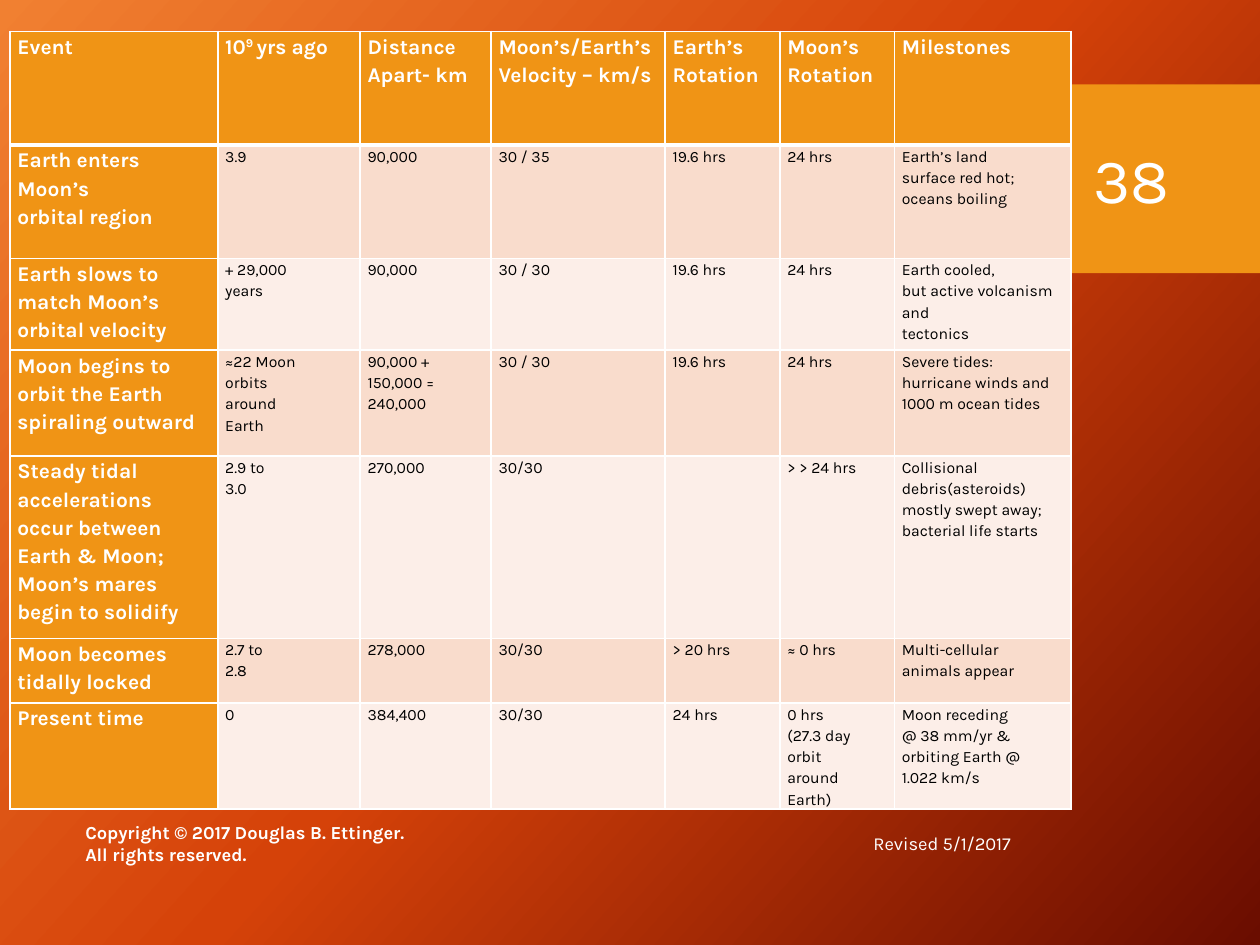
"""Build the slide on the milestones of the Earth and Moon."""
import copy

import pptx
import pptx.dml.color
import pptx.enum.shapes
import pptx.enum.text
import pptx.oxml
import pptx.oxml.ns
import pptx.util

Cm, Pt = pptx.util.Cm, pptx.util.Pt
ALIGN, ANCHOR = pptx.enum.text.PP_ALIGN, pptx.enum.text.MSO_ANCHOR

HUES = {"light": "F18031", "mid": "D54209", "dark": "6A0D00", "gold": "F09415",
        "odd": "F9DCCC", "even": "FCEEE8", "white": "FFFFFF", "black": "000000"}

COLS = [4.19, 2.87, 2.64, 3.51, 2.31, 2.31, 3.56]
ROWS = [2.29, 2.29, 1.85, 2.13, 3.68, 1.3, 2.13]

CELLS = [
    ["Event", "10^9 ^yrs ago", "Distance\nApart- km", "Moon’s/Earth’s\nVelocity – km/s",
     "Earth’s\nRotation", "Moon’s\nRotation", "Milestones"],
    ["Earth enters Moon’s\norbital region", "3.9", "90,000", "30 / 35", "19.6 hrs", "24 hrs",
     "Earth’s land\nsurface red hot;\noceans boiling"],
    ["Earth slows to\nmatch Moon’s\norbital velocity", "+ 29,000\nyears", "90,000", "30 / 30",
     "19.6 hrs", "24 hrs", "Earth cooled,\nbut active volcanism and\ntectonics"],
    ["Moon begins to\norbit the Earth\nspiraling outward", "≈22 Moon\norbits\naround\nEarth",
     "90,000 +\n150,000 =\n240,000", "30 / 30", "19.6 hrs", "24 hrs",
     "Severe tides:\nhurricane winds and 1000 m ocean tides"],
    ["Steady tidal accelerations\noccur between\nEarth & Moon;\nMoon’s mares begin to solidify",
     "2.9 to\n3.0", "270,000", "30/30", "", "> > 24 hrs",
     "Collisional\ndebris(asteroids)\nmostly swept away;\nbacterial life starts"],
    ["Moon becomes\ntidally locked", "2.7 to\n2.8", "278,000", "30/30", "> 20 hrs", "≈ 0 hrs",
     "Multi-cellular\nanimals appear"],
    ["Present time", "0", "384,400", "30/30", "24 hrs",
     "0 hrs\n(27.3 day\norbit\naround\nEarth)",
     "Moon receding\n@ 38 mm/yr &\norbiting Earth @\n1.022 km/s"],
]


def tint(name):
    """Return the named colour."""
    return pptx.dml.color.RGBColor.from_string(HUES[name])


def apply(item, form):
    """Set each attribute of the item from a dict."""
    for key, value in form.items():
        setattr(item, key, value)


class Deck:
    """Holds the style and the current slide."""

    font = "Karla"
    head = {"size": Pt(12), "bold": True}
    body = {"size": Pt(9), "bold": False}
    inset = {"margin_left": Cm(0.15), "margin_right": Cm(0.15),
             "margin_top": 0, "margin_bottom": 0}

    def __init__(self):
        """Start a deck with one blank slide."""
        self.file = pptx.Presentation()
        apply(self.file, {"slide_width": Cm(25.4), "slide_height": Cm(19.05)})
        self.slide = self.file.slides.add_slide(self.file.slide_layouts[6])

    def back(self, names, angle):
        """Fill the background with evenly spaced colours."""
        fill = self.slide.background.fill
        fill.gradient()
        fill.gradient_angle = angle
        stops = next(self.slide.element.iter(pptx.oxml.ns.qn("a:gsLst")))
        while len(stops) < len(names):
            stops.append(copy.deepcopy(stops[0]))
        for spot, (stop, name) in enumerate(zip(fill.gradient_stops, names)):
            stop.position = spot / (len(names) - 1)
            stop.color.rgb = tint(name)

    def block(self, box, name):
        """Add a plain rectangle."""
        kind = pptx.enum.shapes.MSO_SHAPE.RECTANGLE
        shape = self.slide.shapes.add_shape(kind, *map(Cm, box))
        shape.shadow.inherit = False
        shape.fill.solid()
        shape.fill.fore_color.rgb = tint(name)
        shape.line.fill.background()

    def text(self, frame, words, form, name="white", para=None):
        """Set lines as paragraphs, with carets around superscripts."""
        for row, line in enumerate(words.split("\n")):
            part = frame.add_paragraph() if row else frame.paragraphs[0]
            apply(part, para or {})
            for turn, piece in enumerate(line.split("^")):
                run = part.add_run()
                run.text = piece
                apply(run.font, {"name": self.font, **form})
                run.font.color.rgb = tint(name)
                if turn % 2:
                    run.font._element.set("baseline", "30000")

    def label(self, box, words, form, align=ALIGN.LEFT):
        """Add a text box centred on its height."""
        frame = self.slide.shapes.add_textbox(*map(Cm, box)).text_frame
        apply(frame, {"word_wrap": True, "vertical_anchor": ANCHOR.MIDDLE})
        self.text(frame, words, form, para={"alignment": align})

    def edge(self, cell, widths):
        """Draw the four white borders of a cell."""
        props = cell._tc.get_or_add_tcPr()
        for side, width in widths.items():
            props.append(pptx.oxml.parse_xml(
                f'<a:ln{side} {pptx.oxml.ns.nsdecls("a")} w="{Pt(width)}"><a:solidFill>'
                f'<a:srgbClr val="{HUES["white"]}"/></a:solidFill></a:ln{side}>'))

    def grid(self, left, top, cols, rows, cells):
        """Add a table with a gold first row and column."""
        size = (left, top, sum(cols), sum(rows))
        table = self.slide.shapes.add_table(len(rows), len(cols), *map(Cm, size)).table
        for col, width in zip(table.columns, cols):
            col.width = Cm(width)
        for row, height in zip(table.rows, rows):
            row.height = Cm(height)
        for down, texts in enumerate(cells):
            for over, words in enumerate(texts):
                cell = table.cell(down, over)
                lead = down == 0 or over == 0
                apply(cell, self.inset)
                self.edge(cell, {"L": 1, "R": 1, "T": 3 if down == 1 else 1,
                                 "B": 3 if down == 0 else 1})
                cell.fill.solid()
                cell.fill.fore_color.rgb = tint(
                    "gold" if lead else "odd" if down % 2 else "even")
                self.text(cell.text_frame, words, self.head if lead else self.body,
                          "white" if lead else "black", {"line_spacing": 1.15})


def main():
    """Build and save the slide."""
    deck = Deck()
    deck.back(["light", "mid", "dark"], 318)
    deck.block((21.41, 1.7, 3.99, 3.81), "gold")
    deck.grid(0.2, 0.63, COLS, ROWS, CELLS)
    deck.label((14.91, 16.48, 5.72, 1.02), "Revised 5/1/2017", {"size": Pt(10.5)}, ALIGN.RIGHT)
    deck.label((1.47, 16.48, 13.44, 1.02),
               "Copyright © 2017 Douglas B. Ettinger.\nAll rights reserved.",
               {"size": Pt(10.5), "bold": True})
    deck.label((21.79, 2.08, 3.23, 3.02), "38", {"size": Pt(36)})
    deck.file.save("out.pptx")


if __name__ == "__main__":
    main()
